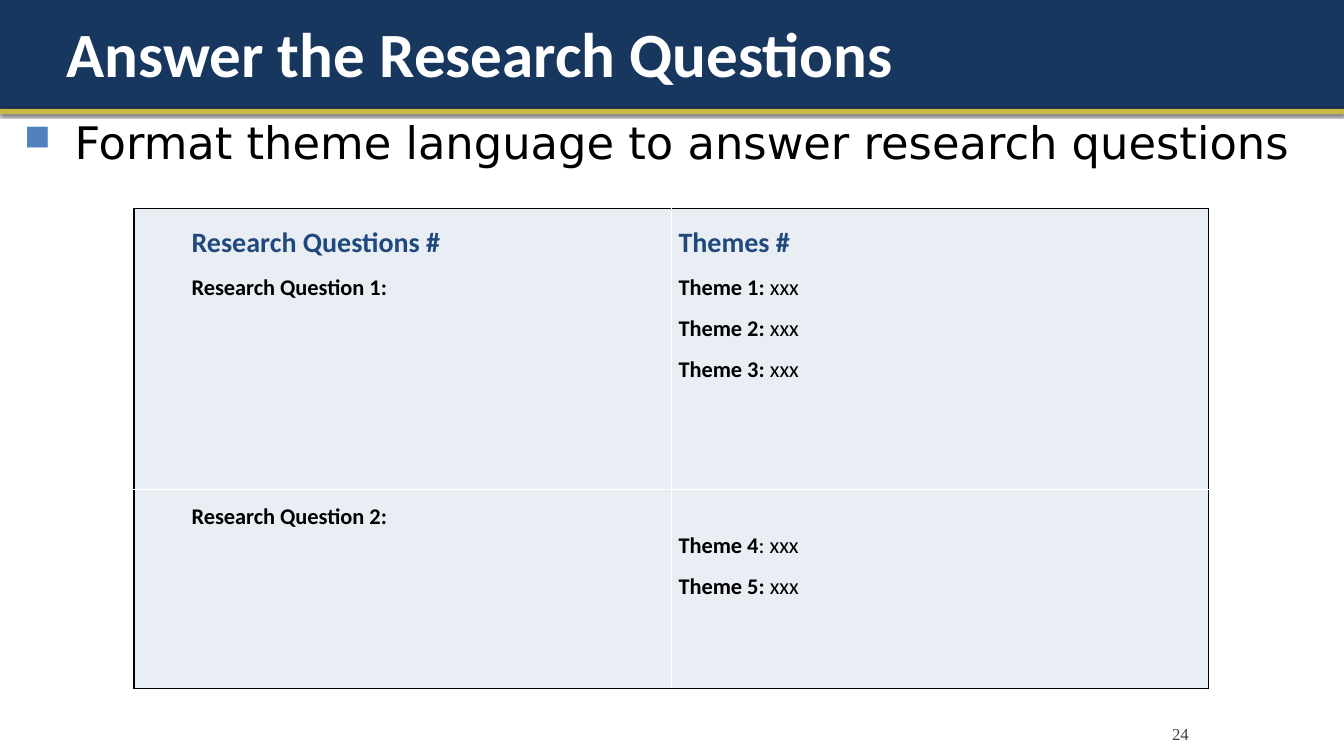
from dataclasses import dataclass

from lxml.etree import SubElement
from pptx import Presentation
from pptx.dml.color import RGBColor
from pptx.enum.shapes import MSO_SHAPE
from pptx.enum.text import MSO_ANCHOR, PP_ALIGN
from pptx.oxml import parse_xml
from pptx.oxml.ns import nsdecls, qn
from pptx.util import Pt

EMU_PER_PX = 9144


@dataclass(frozen=True)
class Theme:
    """Colours, fonts and type sizes of the slide."""
    navy: str = "17375E"
    gold: str = "CBB845"
    white: str = "FFFFFF"
    black: str = "000000"
    heading: str = "1F497D"
    bullet: str = "4F81BD"
    cell: str = "E9EDF4"
    grey: str = "3F3F3F"
    title_font: str = "Calibri"
    body_font: str = "DejaVu Sans"
    number_font: str = "Times New Roman"
    title_size: int = 45
    body_size: int = 32
    heading_size: int = 20
    cell_size: int = 16
    number_size: int = 12


def px(length):
    """Turn px into EMU."""
    return length * EMU_PER_PX


class SlideBuilder:
    """Draws styled elements on the current slide."""

    def __init__(self, slide, theme):
        """Keep the slide and its theme."""
        self.slide = slide
        self.theme = theme

    def style(self, paragraph, font, size, color, bold=None):
        """Set the font of a whole paragraph."""
        paragraph.font.name = font
        paragraph.font.size = Pt(size)
        paragraph.font.color.rgb = RGBColor.from_string(color)
        if bold is not None:
            paragraph.font.bold = bold

    def band(self, top, height, color):
        """Draw a full-width band."""
        band = self.slide.shapes.add_shape(
            MSO_SHAPE.RECTANGLE, 0, px(top), px(1333), px(height))
        band.shadow.inherit = False
        band.fill.solid()
        band.fill.fore_color.rgb = RGBColor.from_string(color)
        band.line.fill.background()
        return band

    def cast_shadow(self, band):
        """Give a band a soft shadow below it."""
        effects = band._element.spPr.find(qn("a:effectLst"))
        effects.append(parse_xml(
            f'<a:outerShdw {nsdecls("a")} blurRad="{Pt(2.5)}" dist="{Pt(0.8)}" '
            f'dir="5400000" rotWithShape="0"><a:srgbClr val="{self.theme.black}">'
            '<a:alpha val="60000"/></a:srgbClr></a:outerShdw>'))

    def text(self, box, insets, wording, font, size, color, bold=False,
             anchor=MSO_ANCHOR.TOP, align=PP_ALIGN.LEFT, bulleted=False):
        """Place a one-paragraph text box."""
        frame = self.slide.shapes.add_textbox(*map(px, box)).text_frame
        frame.word_wrap = True
        frame.vertical_anchor = anchor
        (frame.margin_left, frame.margin_top,
         frame.margin_right, frame.margin_bottom) = map(px, insets)
        paragraph = frame.paragraphs[0]
        paragraph.text = wording
        paragraph.alignment = align
        if bulleted:
            self.bullet(paragraph)
        self.style(paragraph, font, size, color, bold)

    def bullet(self, paragraph):
        """Add a square bullet with a hanging indent."""
        props = paragraph._p.get_or_add_pPr()
        props.set("marL", str(px(68)))
        props.set("indent", str(px(-50)))
        color = SubElement(props, qn("a:buClr"))
        SubElement(color, qn("a:srgbClr"), val=self.theme.bullet)
        SubElement(props, qn("a:buSzPct"), val="80000")
        SubElement(props, qn("a:buChar"), char="■")

    def borders(self, cell, sides):
        """Draw the cell borders, dark on the named sides and white elsewhere."""
        props = cell._tc.get_or_add_tcPr()
        for side in "LRTB":
            color = self.theme.black if side in sides else self.theme.white
            props.append(parse_xml(
                f'<a:ln{side} {nsdecls("a")} w="{Pt(1)}"><a:solidFill>'
                f'<a:srgbClr val="{color}"/></a:solidFill></a:ln{side}>'))

    def cell(self, cell, lines, sides, indent, top):
        """Fill a table cell with (bold, plain, is_heading) lines."""
        theme = self.theme
        self.borders(cell, sides)
        cell.fill.solid()
        cell.fill.fore_color.rgb = RGBColor.from_string(theme.cell)
        cell.margin_left = cell.margin_right = px(7)
        cell.margin_top, cell.margin_bottom = px(top), 0
        frame = cell.text_frame
        for index, (strong, plain, is_heading) in enumerate(lines):
            paragraph = frame.add_paragraph() if index else frame.paragraphs[0]
            paragraph.line_spacing = 1.5
            paragraph._p.get_or_add_pPr().set("marL", str(px(indent)))
            for wording, bold in ((strong, True), (plain, False)):
                if wording:
                    run = paragraph.add_run()
                    run.text = wording
                    run.font.bold = bold
            self.style(paragraph, theme.title_font,
                       theme.heading_size if is_heading else theme.cell_size,
                       theme.heading if is_heading else theme.black)

    def table(self, box, row_heights, rows):
        """Place the table, dark along its outer edge."""
        table = self.slide.shapes.add_table(
            len(rows), len(rows[0]), *map(px, box)).table
        table.first_row = table.horz_banding = False
        for row, (height, contents) in enumerate(zip(row_heights, rows)):
            table.rows[row].height = px(height)
            for column, (lines, top) in enumerate(contents):
                sides = "TB"[row] + "LR"[column]
                indent = 0 if column else 50
                self.cell(table.cell(row, column), lines, sides, indent, top)


def main():
    """Build and save the slide."""
    theme = Theme()
    deck = Presentation()
    deck.slide_width, deck.slide_height = px(1333), px(750)
    builder = SlideBuilder(deck.slides.add_slide(deck.slide_layouts[6]), theme)

    builder.band(0, 108, theme.navy)
    builder.cast_shadow(builder.band(108, 5, theme.gold))
    builder.text((56, 0, 1200, 104), (10, 5, 5, 5), "Answer the Research Questions",
                 theme.title_font, theme.title_size, theme.white, bold=True,
                 anchor=MSO_ANCHOR.MIDDLE)
    builder.text((0, 104, 1333, 90), (6, 10, 10, 5),
                 "Format theme language to answer research questions",
                 theme.body_font, theme.body_size, theme.black, bulleted=True)

    first_themes = [(f"Theme {number}:", " xxx", False) for number in (1, 2, 3)]
    builder.table((133, 207, 1066, 476), (279, 197), [
        [([("Research Questions #", "", True), ("Research Question 1:", "", False)], 0),
         ([("Themes #", "", True), *first_themes], 0)],
        [([("Research Question 2:", "", False)], 0),
         ([("Theme 4", ": xxx", False), ("Theme 5: ", "xxx", False)], 28)],
    ])
    builder.text((1078, 708, 111, 30), (10, 5, 10, 0), "24", theme.number_font,
                 theme.number_size, theme.grey, anchor=MSO_ANCHOR.BOTTOM,
                 align=PP_ALIGN.RIGHT)
    deck.save("out.pptx")


if __name__ == "__main__":
    main()
